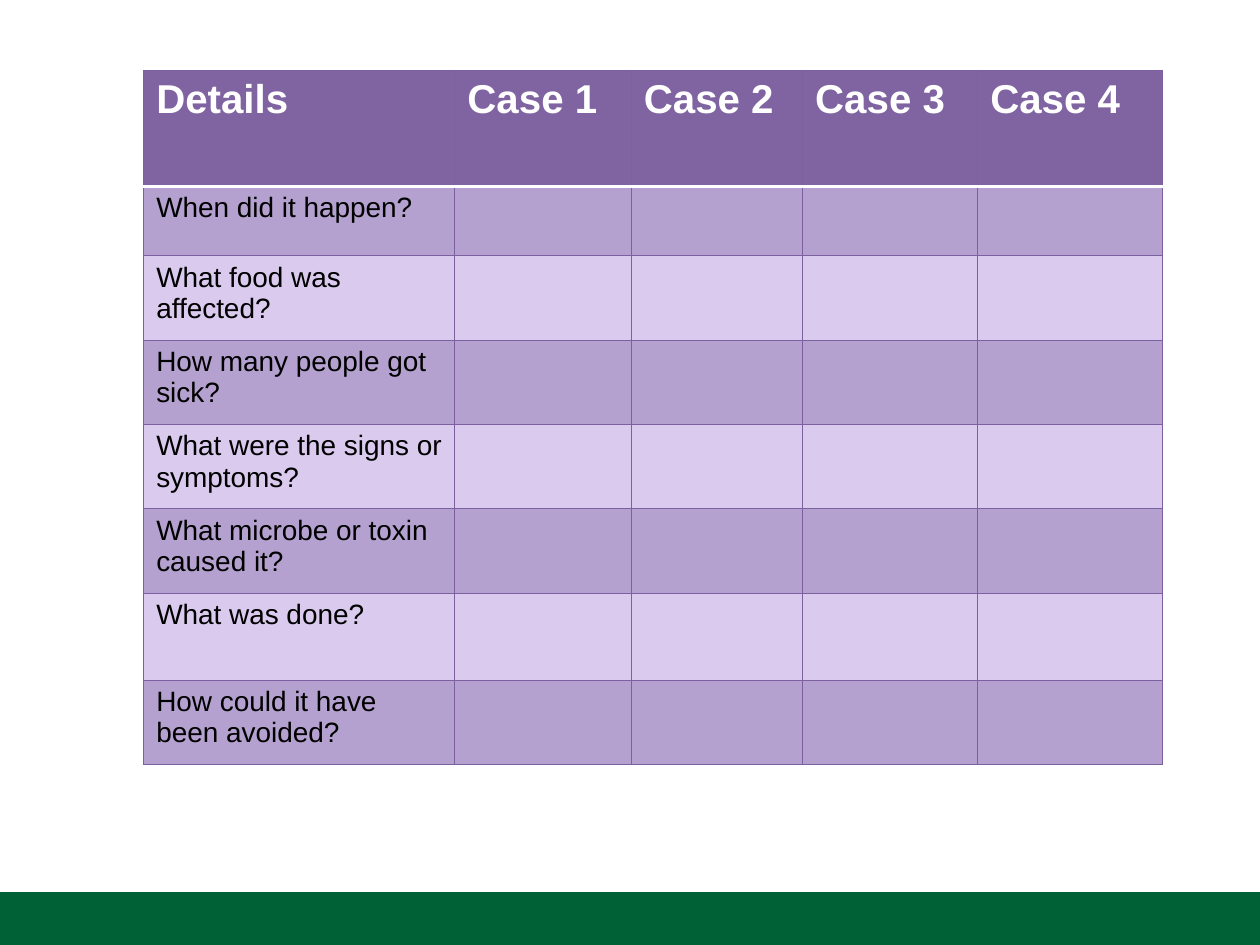
from lxml import etree
from pptx import Presentation
from pptx.dml.color import RGBColor
from pptx.enum.shapes import MSO_SHAPE
from pptx.oxml.ns import qn
from pptx.util import Inches, Pt

RECTANGLE = MSO_SHAPE.RECTANGLE
BLANK_LAYOUT = 6

COLORS = {
    "green": "006036",
    "header": "8064A2",
    "dark_band": "B4A1CF",
    "light_band": "DACAEE",
    "grid": "7D60A0",
    "white": "FFFFFF",
    "black": "000000",
}


def rgb(name):
    return RGBColor.from_string(COLORS[name])


def add_border(cell, side, color, width):
    line = etree.SubElement(cell._tc.get_or_add_tcPr(), qn(f"a:ln{side}"), w=str(Pt(width)))
    fill = etree.SubElement(line, qn("a:solidFill"))
    etree.SubElement(fill, qn("a:srgbClr"), val=COLORS[color])


prs = Presentation()
prs.slide_width, prs.slide_height = Inches(10), Inches(7.5)
slide = prs.slides.add_slide(prs.slide_layouts[BLANK_LAYOUT])

# Green footer bar
footer = slide.shapes.add_shape(RECTANGLE, Inches(0), Inches(7.08), Inches(10), Inches(0.42))
footer.shadow.inherit = False
footer.fill.solid()
footer.fill.fore_color.rgb = rgb("green")
footer.line.fill.background()

# Worksheet contents
headings = ["Details"] + [f"Case {number}" for number in range(1, 5)]
questions = [
    "When did it happen?",
    "What food was affected?",
    "How many people got sick?",
    "What were the signs or symptoms?",
    "What microbe or toxin caused it?",
    "What was done?",
    "How could it have been avoided?",
]
column_widths = [2.47, 1.4, 1.36, 1.39, 1.47]
row_heights = [0.92, 0.55, 0.67, 0.67, 0.67, 0.67, 0.69, 0.67]

# Case comparison table
cases = slide.shapes.add_table(
    len(row_heights), len(column_widths), Inches(1.14), Inches(0.56),
    Inches(sum(column_widths)), Inches(sum(row_heights)),
).table
for column, width in zip(cases.columns, column_widths):
    column.width = Inches(width)
for row, height in zip(cases.rows, row_heights):
    row.height = Inches(height)

# Cell text
for col, heading in enumerate(headings):
    cases.cell(0, col).text = heading
for row, question in enumerate(questions, start=1):
    cases.cell(row, 0).text = question

# Cell borders, fills and fonts
for row in range(len(row_heights)):
    is_header = row == 0
    band = "header" if is_header else "dark_band" if row % 2 else "light_band"
    font_format = {
        "name": "Arial",
        "size": Pt(23 if is_header else 16),
        "bold": is_header,
    }
    borders = {side: ("grid", 0.75) for side in ("L", "R", "T", "B")}
    if row < 2:
        borders["B" if is_header else "T"] = ("white", 2)
    for cell in cases.rows[row].cells:
        for side, (color, width) in borders.items():
            add_border(cell, side, color, width)
        cell.fill.solid()
        cell.fill.fore_color.rgb = rgb(band)
        font = cell.text_frame.paragraphs[0].font
        for attribute, value in font_format.items():
            setattr(font, attribute, value)
        font.color.rgb = rgb("white" if is_header else "black")

prs.save("out.pptx")
